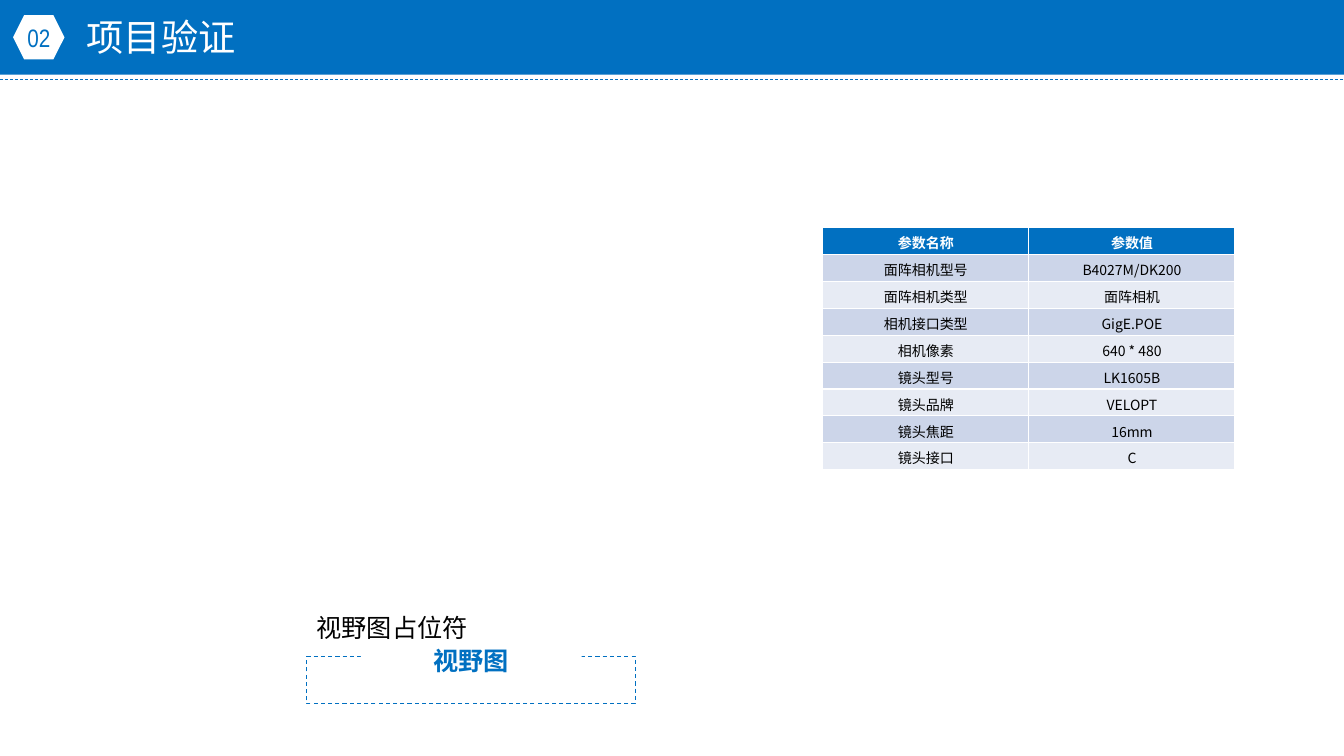
from lxml import etree
from pptx import Presentation
from pptx.dml.color import RGBColor
from pptx.enum import dml, shapes, text
from pptx.oxml import ns
from pptx.util import Inches, Pt

COLORS = {"blue": "0170C1", "white": "FFFFFF", "black": "000000",
          "band_dark": "CCD5E9", "band_light": "E7EBF4"}
CJK = "Noto Sans CJK SC"
PARAMETERS = [
    ("参数名称", "参数值"),
    ("面阵相机型号", "B4027M/DK200"),
    ("面阵相机类型", "面阵相机"),
    ("相机接口类型", "GigE.POE"),
    ("相机像素", "640 * 480"),
    ("镜头型号", "LK1605B"),
    ("镜头品牌", "VELOPT"),
    ("镜头焦距", "16mm"),
    ("镜头接口", "C"),
]


def rgb(name):
    return RGBColor.from_string(COLORS[name])


def paint(target, color):
    target.fill.solid()
    target.fill.fore_color.rgb = rgb(color)


def write(tf, words, size, color, bold=False, name=CJK, align=text.PP_ALIGN.LEFT):
    p = tf.paragraphs[0]
    p.alignment = align
    r = p.add_run()
    r.text = words
    for key, value in {"size": Pt(size), "bold": bold, "name": name}.items():
        setattr(r.font, key, value)
    r.font.color.rgb = rgb(color)
    etree.SubElement(r._r.get_or_add_rPr(), ns.qn("a:ea"), typeface=name)


def fit_to_text(tf):
    tf.word_wrap = True
    tf.auto_size = text.MSO_AUTO_SIZE.SHAPE_TO_FIT_TEXT
    tf.vertical_anchor = text.MSO_ANCHOR.TOP


def dash(line, width):
    line.color.rgb = rgb("blue")
    line.width = Pt(width)
    line.dash_style = dml.MSO_LINE.DASH


def add_block(s, kind, box, fill=None):
    sp = s.shapes.add_shape(kind, *map(Inches, box))
    sp.shadow.inherit = False
    sp.line.fill.background()
    if fill:
        paint(sp, fill)
    else:
        sp.fill.background()
    return sp


def add_rule(s, x1, y1, x2, y2):
    line = s.shapes.add_connector(shapes.MSO_CONNECTOR.STRAIGHT,
                                  *map(Inches, (x1, y1, x2, y2)))
    dash(line.line, 0.5)
    etree.SubElement(line._element.spPr, ns.qn("a:effectLst"))


def add_header(s, number, words):
    add_block(s, shapes.MSO_SHAPE.RECTANGLE, (0, 0, 13.33, 0.74), "blue")
    add_rule(s, 0, 0.79, 13.33, 0.79)
    badge = add_block(s, shapes.MSO_SHAPE.HEXAGON, (0.13, 0.15, 0.51, 0.44), "white")
    tf = badge.text_frame
    for side in ("left", "top", "right", "bottom"):
        setattr(tf, f"margin_{side}", 0)
    tf.vertical_anchor = text.MSO_ANCHOR.MIDDLE
    write(tf, number, 18, "blue", name="Arial Narrow", align=text.PP_ALIGN.CENTER)

    title = s.shapes.title
    title.left, title.top, title.width, title.height = map(Inches, (0.76, 0.09, 1.75, 0.55))
    title.text_frame.margin_right = 0
    fit_to_text(title.text_frame)
    write(title.text_frame, words, 26.6, "white")
    s.shapes._spTree.append(title._element)


def add_view_frame(s):
    frame = add_block(s, shapes.MSO_SHAPE.ROUNDED_RECTANGLE, (3.04, 6.51, 3.26, 0.47))
    frame.adjustments[0] = 0
    dash(frame.line, 0.75)
    label = add_block(s, shapes.MSO_SHAPE.RECTANGLE, (3.58, 6.35, 2.19, 0.4), "white")
    fit_to_text(label.text_frame)
    write(label.text_frame, "视野图", 18, "blue", bold=True, align=text.PP_ALIGN.CENTER)
    tb = s.shapes.add_textbox(*map(Inches, (3.04, 6.03, 3.09, 0.4)))
    fit_to_text(tb.text_frame)
    write(tb.text_frame, "视野图占位符", 18, "black")


def border(cell):
    """Draw white borders; they must precede the cell's fill."""
    tcPr = cell._tc.get_or_add_tcPr()
    for side in ("lnL", "lnR", "lnT", "lnB"):
        ln = etree.SubElement(tcPr, ns.qn(f"a:{side}"), w=str(Pt(1)))
        fill = etree.SubElement(ln, ns.qn("a:solidFill"))
        etree.SubElement(fill, ns.qn("a:srgbClr"), val=COLORS["white"])


def add_parameter_table(s, rows):
    height = Inches(2.4)
    table = s.shapes.add_table(len(rows), 2, Inches(8.16), Inches(2.26),
                               Inches(4.09), height).table
    for i, values in enumerate(rows):
        table.rows[i].height = height // len(rows)
        header = i == 0
        fill = "blue" if header else "band_dark" if i % 2 else "band_light"
        for j, value in enumerate(values):
            cell = table.cell(i, j)
            border(cell)
            paint(cell, fill)
            cell.margin_top, cell.margin_bottom = Inches(0.05), Inches(0.01)
            write(cell.text_frame, value, 10, "white" if header else "black",
                  bold=header, align=text.PP_ALIGN.CENTER)


def main():
    prs = Presentation()
    prs.slide_width, prs.slide_height = Inches(13.33), Inches(7.5)
    s = prs.slides.add_slide(prs.slide_layouts[5])
    add_header(s, "02", "项目验证")
    add_view_frame(s)
    add_parameter_table(s, PARAMETERS)
    prs.save("out.pptx")


if __name__ == "__main__":
    main()
